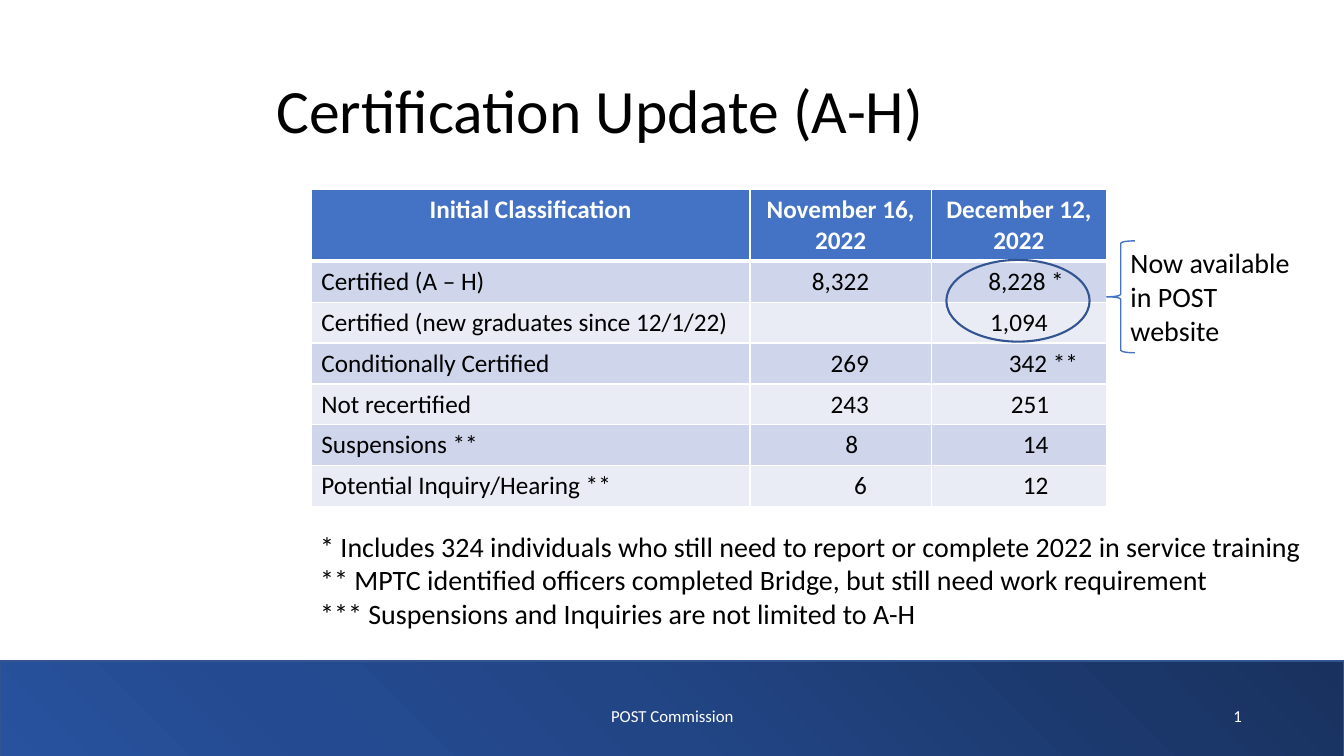
from dataclasses import dataclass

from lxml.etree import SubElement
from pptx import Presentation
from pptx.dml.color import RGBColor
from pptx.enum.shapes import MSO_SHAPE as SHAPE
from pptx.enum.text import MSO_ANCHOR as ANCHOR, MSO_AUTO_SIZE as AUTO, PP_ALIGN as ALIGN
from pptx.oxml.ns import qn
from pptx.util import Cm, Pt


@dataclass(frozen=True)
class Theme:
    font: str = "Calibri"
    black: str = "000000"
    white: str = "FFFFFF"
    accent: str = "4472C4"
    outline: str = "325491"
    bands: tuple = ("CFD5EA", "E9EBF5")
    footer_stops: tuple = ((0, "18315E"), (52, "224585"), (76, "244B91"), (100, "28529E"))
    title: int = 44
    note: int = 20
    table: int = 18
    footer: int = 12


def rgb(color):
    return RGBColor.from_string(color)


def write(tf, text, size, color, font, bold=False, align=ALIGN.LEFT, spacing=None):
    """Put each line of text in its own formatted paragraph."""
    for i, line in enumerate(text.split("\n")):
        p = tf.add_paragraph() if i else tf.paragraphs[0]
        p.alignment = align
        p.line_spacing = spacing
        r = p.add_run()
        r.text = line
        r.font.name, r.font.size, r.font.bold = font, Pt(size), bold
        r.font.color.rgb = rgb(color)


def set_border(cell, side, color, width):
    ln = SubElement(cell._tc.get_or_add_tcPr(), qn(f"a:ln{side}"), w=str(Pt(width)))
    SubElement(SubElement(ln, qn("a:solidFill")), qn("a:srgbClr"), val=color)


class SlideBuilder:
    def __init__(self, prs, theme):
        self.theme = theme
        self.s = prs.slides.add_slide(prs.slide_layouts[5])

    def title(self, text, box):
        sp = self.s.shapes.title
        sp.left, sp.top, sp.width, sp.height = map(Cm, box)
        tf = sp.text_frame
        tf.word_wrap, tf.auto_size = True, AUTO.NONE
        tf.vertical_anchor = ANCHOR.MIDDLE
        write(tf, text, self.theme.title, self.theme.black, self.theme.font, spacing=0.9)

    def text(self, text, box, size, color, align=ALIGN.LEFT, anchor=ANCHOR.TOP):
        sp = self.s.shapes.add_textbox(*map(Cm, box))
        tf = sp.text_frame
        tf.word_wrap, tf.vertical_anchor = True, anchor
        write(tf, text, size, color, self.theme.font, align=align)
        return sp

    def slide_number(self, text, box):
        sp = self.text(text, box, self.theme.footer, self.theme.white,
                       ALIGN.RIGHT, ANCHOR.MIDDLE)
        r = sp.text_frame.paragraphs[0].runs[0]._r
        r.tag = qn("a:fld")
        r.set("id", "{B6F15528-21DE-4FAA-801E-634DDDAF4B2B}")
        r.set("type", "slidenum")

    def shape(self, kind, box, line, width):
        sp = self.s.shapes.add_shape(kind, *map(Cm, box))
        sp.shadow.inherit = False
        sp.fill.background()
        sp.line.color.rgb = rgb(line)
        sp.line.width = Pt(width)
        return sp

    def footer_band(self, box):
        sp = self.shape(SHAPE.RECTANGLE, box, self.theme.outline, 1)
        sp.fill.gradient()
        sp.fill.gradient_angle = 225
        stops = sp._element.spPr.find(qn("a:gradFill")).find(qn("a:gsLst"))
        for gs in list(stops):
            stops.remove(gs)
        for pos, color in self.theme.footer_stops:
            gs = SubElement(stops, qn("a:gs"), pos=str(pos * 1000))
            SubElement(gs, qn("a:srgbClr"), val=color)

    def table(self, rows, box, col_widths, row_heights):
        """Each cell is its text, or a pair of text and rightward shift in cm."""
        tbl = self.s.shapes.add_table(len(rows), len(col_widths), *map(Cm, box)).table
        for col, width in zip(tbl.columns, col_widths):
            col.width = Cm(width)
        for row, height in zip(tbl.rows, row_heights):
            row.height = Cm(height)
        for i, row in enumerate(rows):
            for j, value in enumerate(row):
                text, shift = value if isinstance(value, tuple) else (value, 0)
                self.cell(tbl.cell(i, j), text, shift, i, j)

    def cell(self, cell, text, shift, i, j):
        t, header = self.theme, i == 0
        for side in "LRTB":
            heavy = (i, side) in ((0, "B"), (1, "T"))
            set_border(cell, side, t.white, 3 if heavy else 1)
        cell.fill.solid()
        cell.fill.fore_color.rgb = rgb(t.accent if header else t.bands[(i - 1) % 2])
        # Centred text moves by half of the added margin.
        cell.margin_left = Cm(0.25 + 2 * shift)
        write(cell.text_frame, text, t.table, t.white if header else t.black, t.font,
              bold=header, align=ALIGN.CENTER if header or j else ALIGN.LEFT)


def main():
    theme = Theme()
    prs = Presentation()
    prs.slide_width, prs.slide_height = Cm(33.87), Cm(19.05)
    b = SlideBuilder(prs, theme)

    b.footer_band((0, 16.66, 33.87, 2.59))
    b.title("Certification Update (A-H)", (6.71, 1.02, 24.82, 3.68))
    rows = [
        ("Initial Classification", "November 16, 2022", "December 12, 2022"),
        ("Certified (A – H)", "8,322", ("8,228 *", 0.18)),
        ("Certified (new graduates since 12/1/22)", "", "1,094"),
        ("Conditionally Certified", ("269", 0.23), ("342 **", 0.62)),
        ("Not recertified", ("243", 0.23), ("251", 0.28)),
        ("Suspensions **", ("8", 0.28), ("14", 0.42)),
        ("Potential Inquiry/Hearing **", ("6", 0.5), ("12", 0.42)),
    ]
    b.table(rows, (7.85, 4.78, 20.04, 7.98), (11.05, 4.57, 4.42), [1.8] + [1.03] * 6)
    b.text("POST Commission", (11.23, 17.53, 11.43, 1.02), theme.footer, theme.white,
           ALIGN.CENTER, ANCHOR.MIDDLE)
    b.slide_number("2", (23.93, 17.53, 7.62, 1.02))
    b.text("* Includes 324 individuals who still need to report or complete 2022 in service training\n"
           "** MPTC identified officers completed Bridge, but still need work requirement\n"
           "*** Suspensions and Inquiries are not limited to A-H",
           (7.82, 13.21, 27.05, 2.82), theme.note, theme.black)
    b.text("Now available in POST website", (28.24, 6.07, 4.85, 2.82),
           theme.note, theme.black)
    b.shape(SHAPE.OVAL, (23.85, 6.55, 3.61, 2.06), theme.outline, 1.5)
    b.shape(SHAPE.LEFT_BRACE, (27.89, 6.07, 0.71, 2.82), theme.accent, 1)
    prs.save("out.pptx")


if __name__ == "__main__":
    main()
